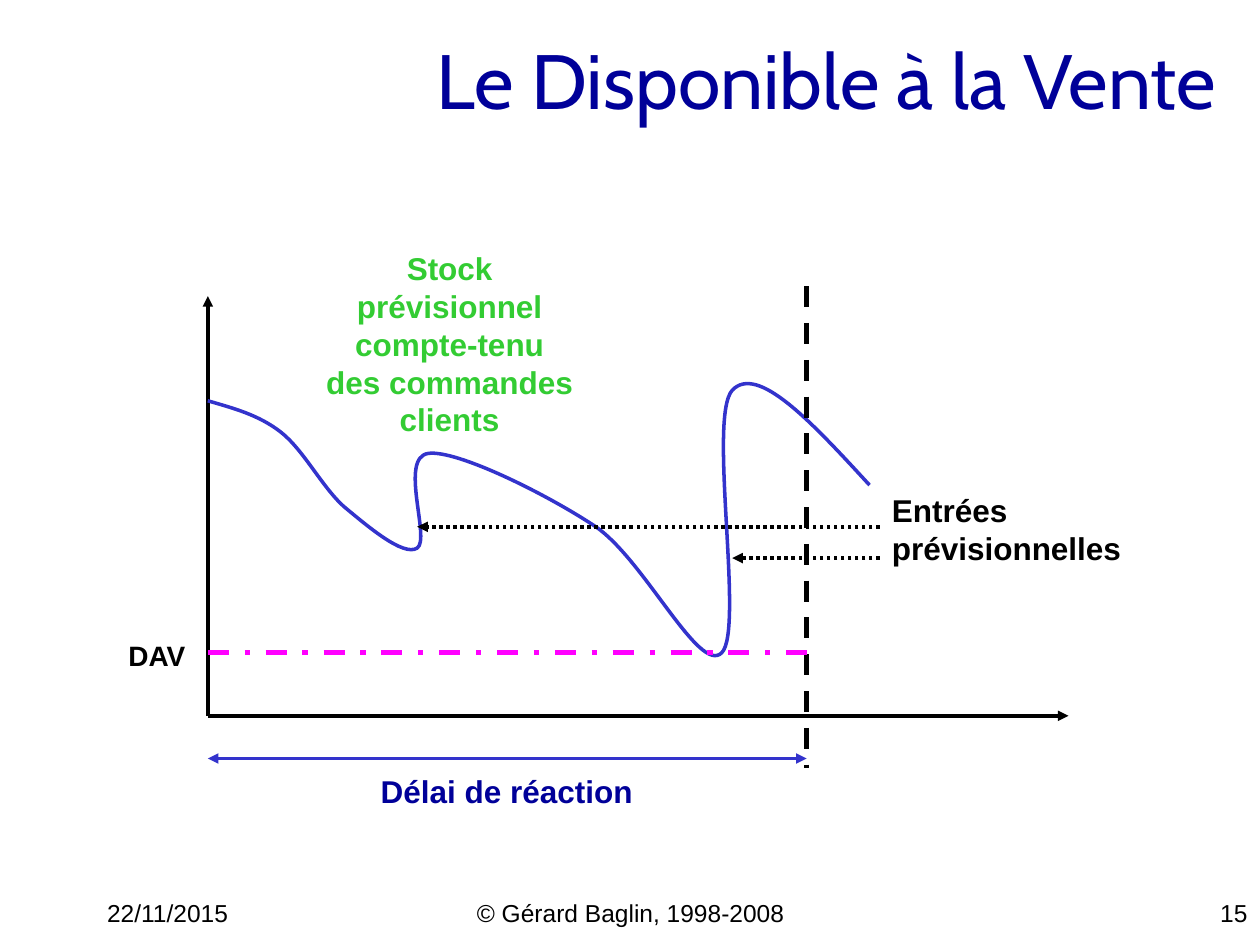
from dataclasses import dataclass

from lxml.etree import SubElement
from pptx import Presentation
from pptx.dml.color import RGBColor
from pptx.enum.dml import MSO_LINE
from pptx.enum.shapes import MSO_CONNECTOR
from pptx.enum.text import MSO_ANCHOR, MSO_AUTO_SIZE, PP_ALIGN
from pptx.oxml.ns import qn
from pptx.util import Cm, Pt


@dataclass(frozen=True)
class Theme:
    black: str = "000000"
    navy: str = "000099"
    blue: str = "3333CC"
    green: str = "33CC33"
    magenta: str = "FF00FF"
    heading_font: str = "Cabin"
    body_font: str = "Arial"
    title: int = 44
    label: int = 18
    small_label: int = 16
    footer: int = 14
    thin: int = 2
    thick: int = 3


class Deck:
    """Draws on the current slide; all positions are in centimetres."""

    def __init__(self, theme):
        self.theme = theme
        self.prs = Presentation()
        self.prs.slide_width, self.prs.slide_height = Cm(25.4), Cm(19.05)
        self.s = self.prs.slides.add_slide(self.prs.slide_layouts[6])

    def text(self, box, lines, size, color, align=PP_ALIGN.LEFT, font=None,
             bold=False, wrap=True, anchor=MSO_ANCHOR.TOP):
        sp = self.s.shapes.add_textbox(*map(Cm, box))
        tf = sp.text_frame
        tf.word_wrap, tf.vertical_anchor = wrap, anchor
        tf.auto_size = MSO_AUTO_SIZE.NONE if wrap else MSO_AUTO_SIZE.SHAPE_TO_FIT_TEXT
        tf.text = lines
        for p in tf.paragraphs:
            p.alignment = align
            p.font.name = font or self.theme.body_font
            p.font.size, p.font.bold = Pt(size), bold
            p.font.color.rgb = RGBColor.from_string(color)

    def label(self, box, lines, color, align=PP_ALIGN.LEFT, size=None):
        self.text(box, lines, size or self.theme.label, color, align,
                  bold=True, wrap=False)

    def outline(self, sp, color, width):
        sp.line.color.rgb = RGBColor.from_string(color)
        sp.line.width = Pt(width)

    def line(self, start, end, color, width=None, dash=None, arrows=()):
        """Straight line; arrows holds "headEnd" (start) and/or "tailEnd" (end)."""
        sp = self.s.shapes.add_connector(
            MSO_CONNECTOR.STRAIGHT, *map(Cm, (*start, *end)))
        self.outline(sp, color, width or self.theme.thin)
        if dash:
            sp.line.dash_style = dash
        for arrow in arrows:
            SubElement(sp.line._get_or_add_ln(), qn(f"a:{arrow}"), type="triangle")
        SubElement(sp._element.spPr, qn("a:effectLst"))

    def curve(self, start, points, color):
        """Open Bézier curve; each three points are two controls and an end."""
        builder = self.s.shapes.build_freeform(*map(Cm, start))
        builder.add_line_segments([(Cm(x), Cm(y)) for x, y in points], close=False)
        sp = builder.convert_to_shape()
        sp.shadow.inherit = False
        sp.fill.background()
        self.outline(sp, color, self.theme.thin)
        outline_path = next(sp._element.iter(qn("a:path")))
        segments = outline_path.findall(qn("a:lnTo"))
        for i in range(0, len(segments), 3):
            bezier = SubElement(outline_path, qn("a:cubicBezTo"))
            for segment in segments[i:i + 3]:
                bezier.append(segment[0])
                outline_path.remove(segment)


def main():
    t = Theme()
    deck = Deck(t)
    axis_x, axis_y = 4.19, 14.43
    horizon_x, dav_y, delay_y = 16.26, 13.16, 15.29

    footers = [
        (1.91, 5.28, "22/11/2015", PP_ALIGN.LEFT),
        (8.69, 8.05, "© Gérard Baglin, 1998-2008", PP_ALIGN.CENTER),
        (20.12, 5.28, "15", PP_ALIGN.RIGHT),
    ]
    for left, width, words, align in footers:
        deck.text((left, 17.98, width, 0.64), words, t.footer, t.black, align)
    deck.text((0, 0, 24.77, 3.18), "Le Disponible à la Vente", t.title, t.navy,
              PP_ALIGN.RIGHT, t.heading_font, anchor=MSO_ANCHOR.MIDDLE)

    for axis_end in [(axis_x, 5.97), (21.54, axis_y)]:
        deck.line((axis_x, axis_y), axis_end, t.black, arrows=["tailEnd"])

    deck.curve((axis_x, 8.08), [
        (4.7, 8.23), (5.21, 8.36), (5.66, 8.71),
        (6.12, 9.07), (6.48, 9.8), (6.93, 10.21),
        (7.39, 10.59), (8.13, 11.23), (8.41, 11.05),
        (8.69, 10.87), (8.03, 9.22), (8.64, 9.14),
        (9.22, 9.07), (11.02, 9.96), (12.01, 10.62),
        (13, 11.3), (14.1, 13.61), (14.55, 13.16),
        (15.01, 12.7), (14.27, 8.43), (14.76, 7.87),
        (15.27, 7.32), (16.38, 8.53), (17.53, 9.78),
    ], t.blue)

    deck.line((horizon_x, 5.77), (horizon_x, 15.49), t.black, t.thick, MSO_LINE.DASH)
    deck.line((axis_x, delay_y), (horizon_x, delay_y), t.blue,
              arrows=["headEnd", "tailEnd"])
    deck.label((7.42, 15.44, 5.59, 1.02), "Délai de réaction", t.navy, PP_ALIGN.CENTER)
    deck.line((axis_x, dav_y), (horizon_x, dav_y), t.magenta, t.thick,
              MSO_LINE.DASH_DOT)
    deck.label((6.32, 4.9, 5.49, 4.06),
               "Stock\nprévisionnel\ncompte-tenu\ndes commandes\nclients",
               t.green, PP_ALIGN.CENTER)

    for receipt_x, y in [(8.41, 10.62), (14.76, 11.25)]:
        deck.line((17.73, y), (receipt_x, y), t.black, dash=MSO_LINE.ROUND_DOT,
                  arrows=["tailEnd"])
    deck.label((17.73, 9.78, 5.13, 1.78), "Entrées\nprévisionnelles", t.black)
    deck.label((2.34, 12.75, 1.7, 0.94), "DAV", t.black, size=t.small_label)

    deck.prs.save("out.pptx")


if __name__ == "__main__":
    main()
